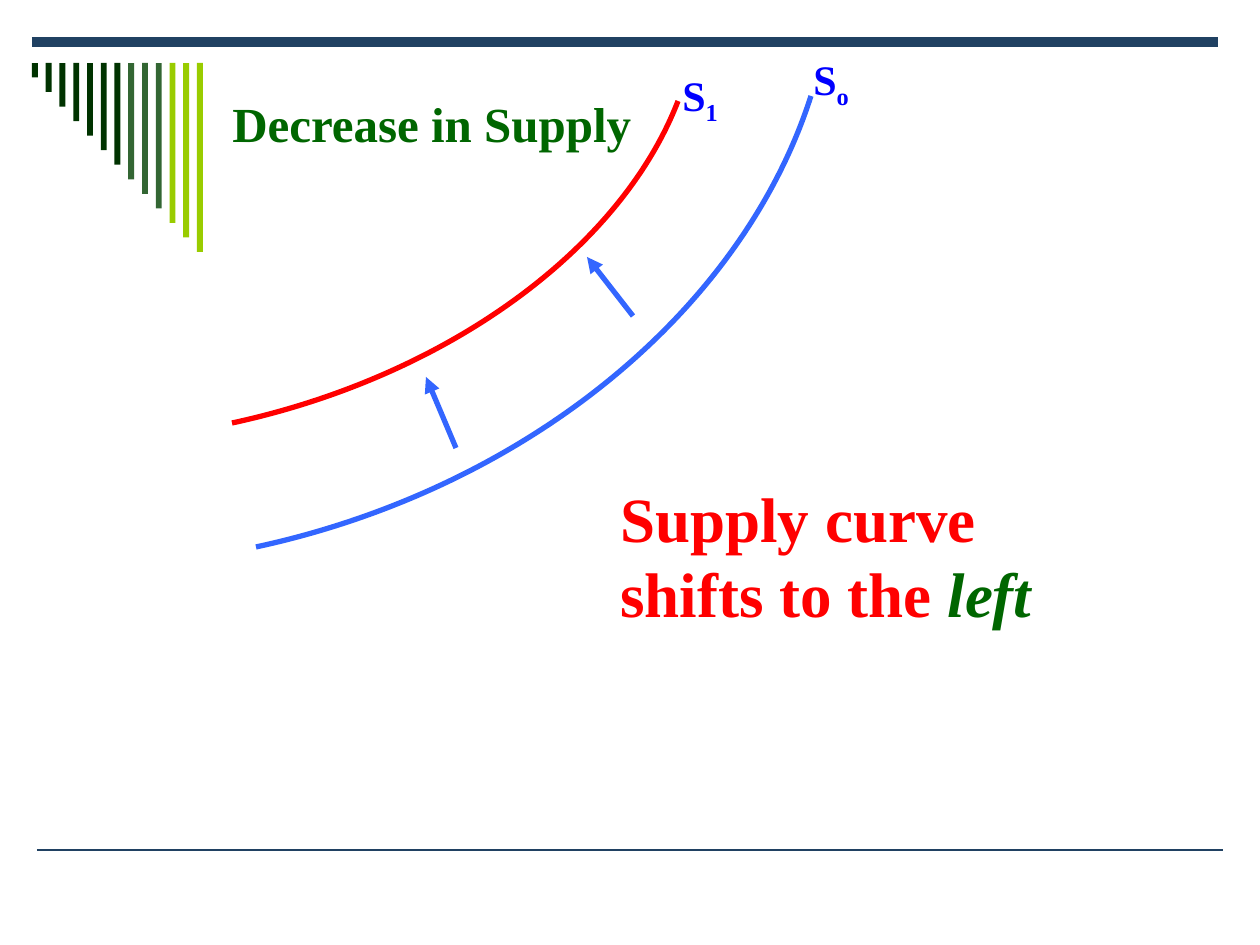
import pptx
import pptx.util
import pptx.dml.color
import pptx.enum.shapes
import pptx.oxml
import pptx.oxml.ns

UNIT = 914400 / 126
FACE = "Times New Roman"
HUES = {
    "navy": "204162", "dark": "003300", "moss": "336633", "lime": "99CC00",
    "green": "006600", "sky": "3366FF", "blue": "0000FF", "red": "FF0000",
}


def px(num):
    return pptx.util.Emu(round(num * UNIT))


def tint(name):
    return pptx.dml.color.RGBColor.from_string(HUES[name])


def node(base, tag, **attrs):
    item = pptx.oxml.parse_xml(f"<a:{tag} {pptx.oxml.ns.nsdecls('a')}/>")
    for key, val in attrs.items():
        item.set(key, val)
    base.append(item)


def stroke(shape, hue, width):
    shape.line.color.rgb = tint(hue)
    shape.line.width = pptx.util.Pt(width)


def rule(slide, start, end, hue, width, arrow=False):
    kind = pptx.enum.shapes.MSO_CONNECTOR.STRAIGHT
    line = slide.shapes.add_connector(kind, *map(px, start + end))
    stroke(line, hue, width)
    if arrow:
        node(line.line._get_or_add_ln(), "tailEnd", type="triangle")
    node(line._element.spPr, "effectLst")


def words(slide, box, size, runs):
    frame = slide.shapes.add_textbox(*map(px, box)).text_frame
    frame.word_wrap = True
    para = frame.paragraphs[0]
    para.line_spacing = pptx.util.Pt(round(size * 1.2, 1))
    for text, hue, style in runs:
        run = para.add_run()
        run.text = text
        look = {"name": FACE, "size": pptx.util.Pt(size), "bold": True}
        look["italic"] = style == "italic"
        for key, val in look.items():
            setattr(run.font, key, val)
        run.font.color.rgb = tint(hue)
        if style == "sub":
            run._r.get_or_add_rPr().set("baseline", "-25000")


def frame(slide, box):
    left, top, width, height = box
    rule(slide, (left + 5, top + height), (left + width + 5, top + height), "navy", 1)
    rule(slide, (left, top), (left + width, top), "navy", 6)


def comb(slide, box):
    left, top, width, height = box
    hues = ["dark"] * 7 + ["moss"] * 3 + ["lime"] * 3
    count, thick = len(hues), 6
    gap = (width - thick) / (count - 1)
    kind = pptx.enum.shapes.MSO_SHAPE.RECTANGLE
    for i, hue in enumerate(hues):
        area = (left + i * gap, top, thick, height * (i + 1) / count)
        bar = slide.shapes.add_shape(kind, *map(px, area))
        bar.shadow.inherit = False
        bar.fill.solid()
        bar.fill.fore_color.rgb = tint(hue)
        bar.line.fill.background()


def curve(slide, box, hue, bends):
    left, top, width, height = box
    spots = [(px(left + x), px(top + y)) for x, y in [*bends, (0, height)]]
    pen = slide.shapes.build_freeform(px(left + width), px(top))
    pen.add_line_segments(spots, close=False)
    arc = pen.convert_to_shape()
    arc.shadow.inherit = False
    arc.fill.background()
    stroke(arc, hue, 3)
    first, *rest = arc._element.xpath(".//a:lnTo")
    first.tag = pptx.oxml.ns.qn("a:cubicBezTo")
    for step in rest:
        first.append(step[0])
        step.getparent().remove(step)


def graph(slide, box):
    left, top = box[:2]
    for start, end in [((224, 352), (194, 281)), ((401, 220), (355, 161))]:
        ends = [(left + x, top + y) for x, y in (start, end)]
        rule(slide, *ends, "sky", 3, True)
    parts = [
        ((24, 0, 555, 451), "sky", [(486, 216), (269, 393)], (569, -42, 98, 63), "o"),
        ((0, 5, 446, 322), "red", [(388, 150), (213, 276)], (438, -26, 78, 63), "1"),
    ]
    for (x, y, wide, high), hue, bends, (tx, ty, tw, th), mark in parts:
        curve(slide, (left + x, top + y, wide, high), hue, bends)
        words(slide, (left + tx, top + ty, tw, th), 24,
              [("S", "blue", ""), (mark, "blue", "sub")])


def main():
    deck = pptx.Presentation()
    deck.slide_width, deck.slide_height = px(1260), px(945)
    slide = deck.slides.add_slide(deck.slide_layouts[6])
    frame(slide, (32, 42, 1186, 808))
    comb(slide, (32, 63, 171, 189))
    words(slide, (220, 87, 464, 72), 28, [("Decrease in Supply", "green", "")])
    graph(slide, (232, 96, 579, 451))
    words(slide, (608, 473, 491, 164), 36,
          [("Supply curve shifts to the ", "red", ""), ("left", "green", "italic")])
    deck.save("out.pptx")


if __name__ == "__main__":
    main()
